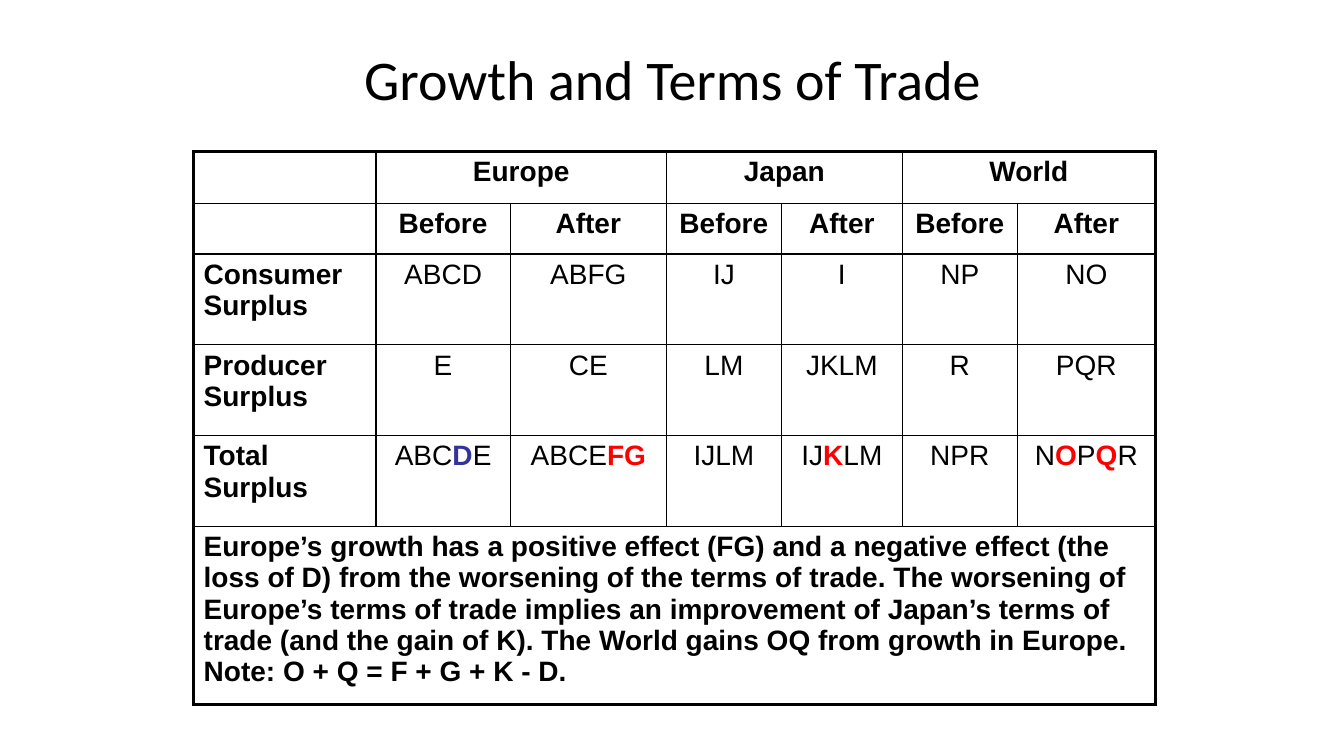
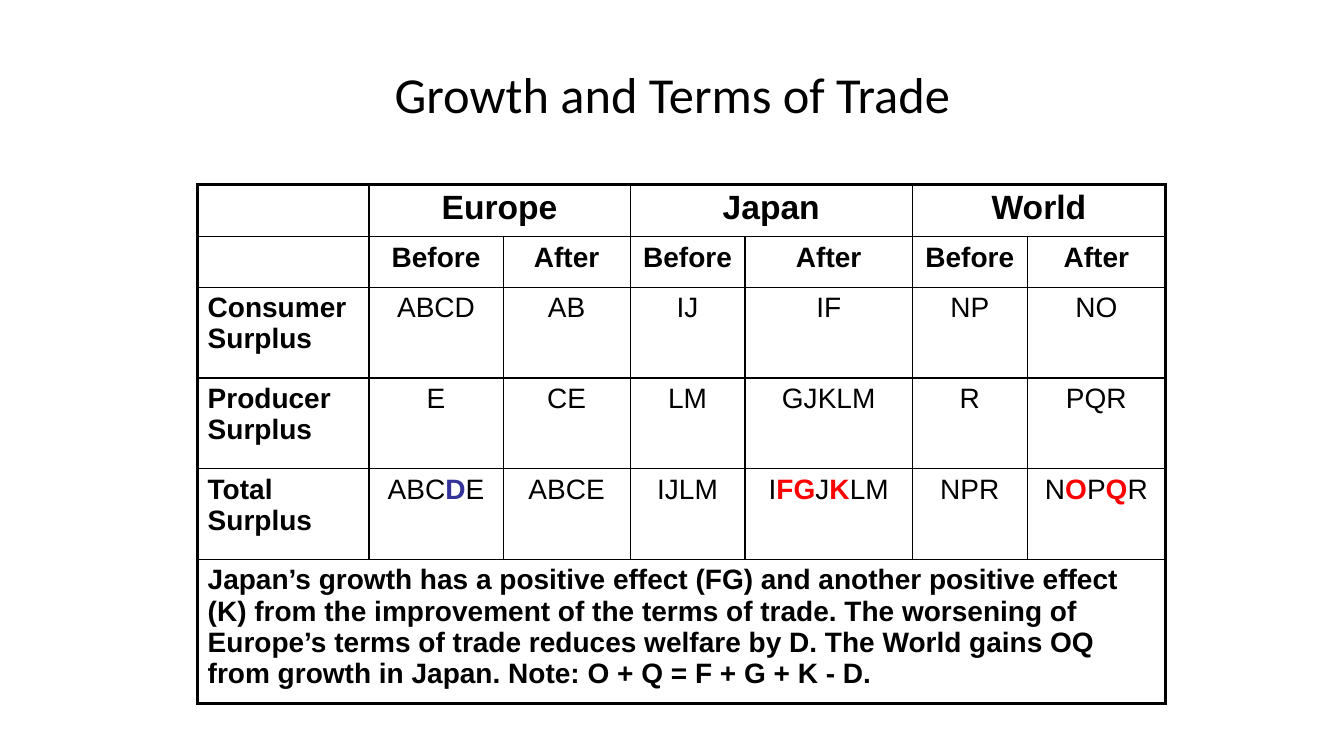
from itertools import groupby

from lxml.etree import SubElement
from pptx import Presentation
from pptx.dml.color import RGBColor
from pptx.enum.text import MSO_ANCHOR, MSO_AUTO_SIZE, PP_ALIGN
from pptx.oxml.ns import qn
from pptx.util import Pt

PX = 9144
COLORS = {"ink": "000000", "loss": "333399", "gain": "FF0000"}
EFFECTS = {"D": "loss", **dict.fromkeys("FGKOQ", "gain")}
REGIONS = ["Europe", "Japan", "World"]
ROW_HEADS = ["Consumer Surplus", "Producer Surplus", "Total Surplus"]
OUTER, INNER = 2.25, 1


def effect_of(letter):
    return EFFECTS.get(letter, "ink")


class Deck:
    title_format = {"name": "Calibri", "bold": False}
    cell_format = {"name": "Arial", "size": Pt(20), "bold": False}

    def __init__(self, width, height):
        self.prs = Presentation()
        self.prs.slide_width, self.prs.slide_height = width * PX, height * PX
        self.s = None

    def add_slide(self):
        self.s = self.prs.slides.add_slide(self.prs.slide_layouts[5])

    def run(self, p, text, formats, color="ink"):
        r = p.add_run()
        r.text = text
        for name, value in formats.items():
            setattr(r.font, name, value)
        r.font.color.rgb = RGBColor.from_string(COLORS[color])

    def title(self, text, box, size):
        sp = self.s.shapes.title
        for name, value in zip(("left", "top", "width", "height"), box):
            setattr(sp, name, value * PX)
        tf = sp.text_frame
        settings = {
            "word_wrap": True,
            "auto_size": MSO_AUTO_SIZE.NONE,
            "vertical_anchor": MSO_ANCHOR.MIDDLE,
        }
        for name, value in settings.items():
            setattr(tf, name, value)
        p = tf.paragraphs[0]
        p.alignment = PP_ALIGN.CENTER
        self.run(p, text, {**self.title_format, "size": Pt(size)})

    def border(self, cell, side, weight):
        ln = SubElement(cell._tc.get_or_add_tcPr(), qn(f"a:ln{side}"), w=str(Pt(weight)))
        fill = SubElement(ln, qn("a:solidFill"))
        SubElement(fill, qn("a:srgbClr"), val=COLORS["ink"])

    def frame(self, table):
        rows, cols = len(table.rows), len(table.columns)
        for i in range(rows):
            for j in range(cols):
                cell = table.cell(i, j)
                span = cell.span_width if cell.is_merge_origin else 1
                outer = {
                    "L": j == 0,
                    "R": j + span == cols,
                    "T": i == 0,
                    "B": i == rows - 1,
                }
                for side, is_outer in outer.items():
                    if cell.is_spanned and side in "LR" and not is_outer:
                        continue
                    self.border(cell, side, OUTER if is_outer else INNER)
                cell.fill.background()

    def cell_text(self, cell, text, align=PP_ALIGN.CENTER, marked=False, **formats):
        p = cell.text_frame.paragraphs[0]
        p.alignment = align
        formats = {**self.cell_format, **formats}
        if not marked:
            self.run(p, text, formats)
            return
        for color, letters in groupby(text, effect_of):
            self.run(p, "".join(letters), {**formats, "bold": color != "ink"}, color)

    def surplus_table(self, left, top, widths, heights, region_size, areas, note):
        rows, cols = len(heights), len(widths)
        table = self.s.shapes.add_table(
            rows, cols, left * PX, top * PX, sum(widths) * PX, sum(heights) * PX
        ).table
        table.first_row = table.horz_banding = False
        for column, width in zip(table.columns, widths):
            column.width = width * PX
        for row, height in zip(table.rows, heights):
            row.height = height * PX

        for j, region in enumerate(REGIONS):
            first = 2 * j + 1
            head = table.cell(0, first)
            head.merge(table.cell(0, first + 1))
            self.cell_text(head, region, bold=True, size=Pt(region_size))
            for k, label in enumerate(("Before", "After")):
                self.cell_text(table.cell(1, first + k), label, bold=True)

        for i, (head, line) in enumerate(zip(ROW_HEADS, areas), 2):
            self.cell_text(table.cell(i, 0), head, PP_ALIGN.LEFT, bold=True)
            for j, text in enumerate(line.split(), 1):
                self.cell_text(table.cell(i, j), text, marked=head == ROW_HEADS[-1])

        note_cell = table.cell(rows - 1, 0)
        note_cell.merge(table.cell(rows - 1, cols - 1))
        self.cell_text(note_cell, note, PP_ALIGN.LEFT, bold=True)
        self.frame(table)


SLIDES = [
    {
        "title": {"box": (217, 30, 900, 95), "size": 40},
        "table": {
            "left": 192,
            "top": 150,
            "widths": [181, 133, 155, 114, 120, 114, 137],
            "heights": [52, 50, 90, 90, 90, 177],
            "region_size": 20,
            "areas": [
                "ABCD ABFG IJ I NP NO",
                "E CE LM JKLM R PQR",
                "ABCDE ABCEFG IJLM IJKLM NPR NOPQR",
            ],
            "note": "Europe’s growth has a positive effect (FG) and a negative effect "
            "(the loss of D) from the worsening of the terms of trade. The worsening of "
            "Europe’s terms of trade implies an improvement of Japan’s terms of trade "
            "(and the gain of K). The World gains OQ from growth in Europe. "
            "Note: O + Q = F + G + K - D.",
        },
    },
    {
        "title": {"box": (67, 30, 1200, 125), "size": 36},
        "table": {
            "left": 196,
            "top": 183,
            "widths": [170, 133, 126, 114, 166, 114, 137],
            "heights": [52, 50, 90, 90, 90, 143],
            "region_size": 24,
            "areas": [
                "ABCD AB IJ IF NP NO",
                "E CE LM GJKLM R PQR",
                "ABCDE ABCE IJLM IFGJKLM NPR NOPQR",
            ],
            "note": "Japan’s growth has a positive effect (FG) and another positive effect "
            "(K) from the improvement of the terms of trade. The worsening of Europe’s "
            "terms of trade reduces welfare by D. The World gains OQ from growth in Japan. "
            "Note: O + Q = F + G + K - D.",
        },
    },
]


def main():
    deck = Deck(1333, 750)
    for content in SLIDES:
        deck.add_slide()
        deck.title("Growth and Terms of Trade", **content["title"])
        deck.surplus_table(**content["table"])
    deck.prs.save("out.pptx")


if __name__ == "__main__":
    main()
